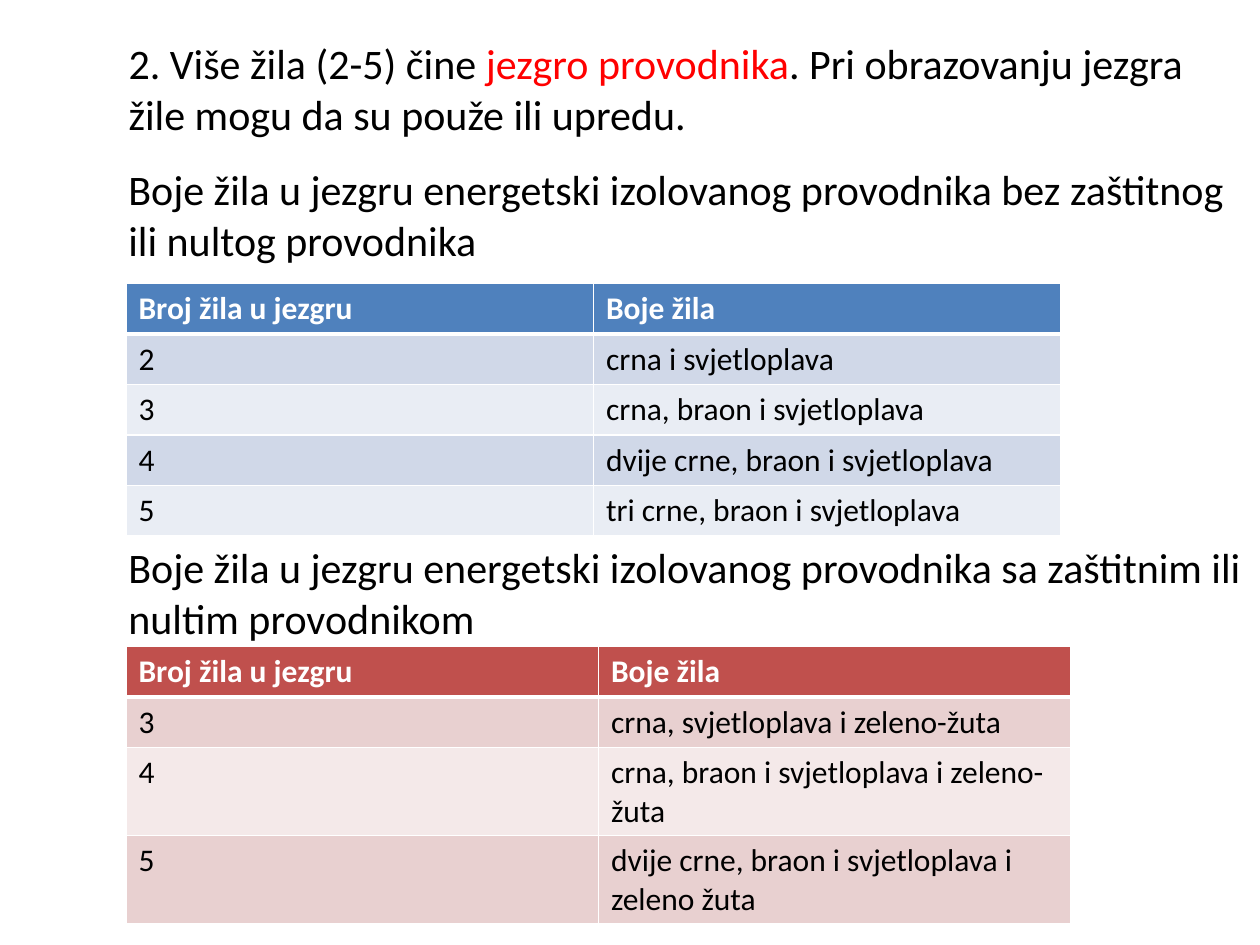
from lxml import etree
from pptx import Presentation
from pptx.dml.color import RGBColor
from pptx.enum.text import MSO_ANCHOR, MSO_AUTO_SIZE, PP_ALIGN
from pptx.oxml.ns import qn
from pptx.util import Inches, Pt

LEFT, TOP = PP_ALIGN.LEFT, MSO_ANCHOR.TOP
GROW = MSO_AUTO_SIZE.SHAPE_TO_FIT_TEXT
TITLE_ONLY = 5
FONT = "Calibri"
BLACK, WHITE, RED = "000000", "FFFFFF", "FF0000"
BLUE_SHADES = ("4F81BD", "D0D8E8", "E9EDF4")
RED_SHADES = ("C0504D", "E8D0D0", "F4E9E9")

HEADER = ("Broj žila u jezgru", "Boje žila")
UNPROTECTED_CORES = [
    HEADER,
    ("2", "crna i svjetloplava"),
    ("3", "crna, braon i svjetloplava"),
    ("4", "dvije crne, braon i svjetloplava"),
    ("5", "tri crne, braon i svjetloplava"),
]
PROTECTED_CORES = [
    HEADER,
    ("3", "crna, svjetloplava i zeleno-žuta"),
    ("4", "crna, braon i svjetloplava i zeleno-žuta"),
    ("5", "dvije crne, braon i svjetloplava i zeleno žuta"),
]


def rgb(value):
    return RGBColor.from_string(value)


def add_run(paragraph, text, size, color, bold=False):
    run = paragraph.add_run()
    run.text = text
    run.font.name = FONT
    run.font.size = Pt(size)
    run.font.bold = bold
    run.font.color.rgb = rgb(color)


def fill_statement(statement, box, parts):
    statement.left, statement.top, statement.width, statement.height = map(Inches, box)
    frame = statement.text_frame
    frame.word_wrap = True
    frame.auto_size = GROW
    frame.vertical_anchor = TOP
    paragraph = frame.paragraphs[0]
    paragraph.alignment = LEFT
    for text, color in parts:
        add_run(paragraph, text, 24, color)


def add_caption(slide, box, text):
    caption = slide.shapes.add_textbox(*map(Inches, box))
    fill_statement(caption, box, [(text, BLACK)])


def set_borders(cell, top, bottom):
    properties = cell._tc.get_or_add_tcPr()
    for side, width in (("L", 1), ("R", 1), ("T", top), ("B", bottom)):
        line = etree.SubElement(properties, qn(f"a:ln{side}"), w=str(Pt(width)))
        solid = etree.SubElement(line, qn("a:solidFill"))
        etree.SubElement(solid, qn("a:srgbClr"), val=WHITE)


def add_core_table(slide, box, row_heights, rows, shades):
    header_shade, *bands = shades
    table = slide.shapes.add_table(len(rows), len(HEADER), *map(Inches, box)).table
    for row, height in zip(table.rows, row_heights):
        row.height = Inches(height)
    for r, values in enumerate(rows):
        is_header = r == 0
        for c, value in enumerate(values):
            cell = table.cell(r, c)
            set_borders(cell, 3 if r == 1 else 1, 3 if is_header else 1)
            cell.fill.solid()
            cell.fill.fore_color.rgb = rgb(header_shade if is_header else bands[(r - 1) % 2])
            add_run(cell.text_frame.paragraphs[0], value, 18,
                    WHITE if is_header else BLACK, is_header)


def main():
    presentation = Presentation()
    presentation.slide_width, presentation.slide_height = Inches(10), Inches(7.5)
    slide = presentation.slides.add_slide(presentation.slide_layouts[TITLE_ONLY])

    fill_statement(slide.shapes.title, (0.92, 0.25, 8.75, 0.91), [
        ("2. Više žila (2-5) čine ", BLACK),
        ("jezgro provodnika", RED),
        (". Pri obrazovanju jezgra žile mogu da su použe ili upredu.", BLACK),
    ])
    add_caption(slide, (0.92, 1.25, 9.08, 0.91),
                "Boje žila u jezgru energetski izolovanog provodnika bez zaštitnog ili nultog provodnika")
    add_core_table(slide, (1, 2.25, 7.42, 2), [0.4] * 5, UNPROTECTED_CORES, BLUE_SHADES)
    add_caption(slide, (0.92, 4.25, 9.08, 0.91),
                "Boje žila u jezgru energetski izolovanog provodnika sa zaštitnim ili nultim provodnikom")
    add_core_table(slide, (1, 5.13, 7.5, 2.2), [0.4, 0.4, 0.7, 0.7], PROTECTED_CORES, RED_SHADES)

    presentation.save("out.pptx")


if __name__ == "__main__":
    main()
